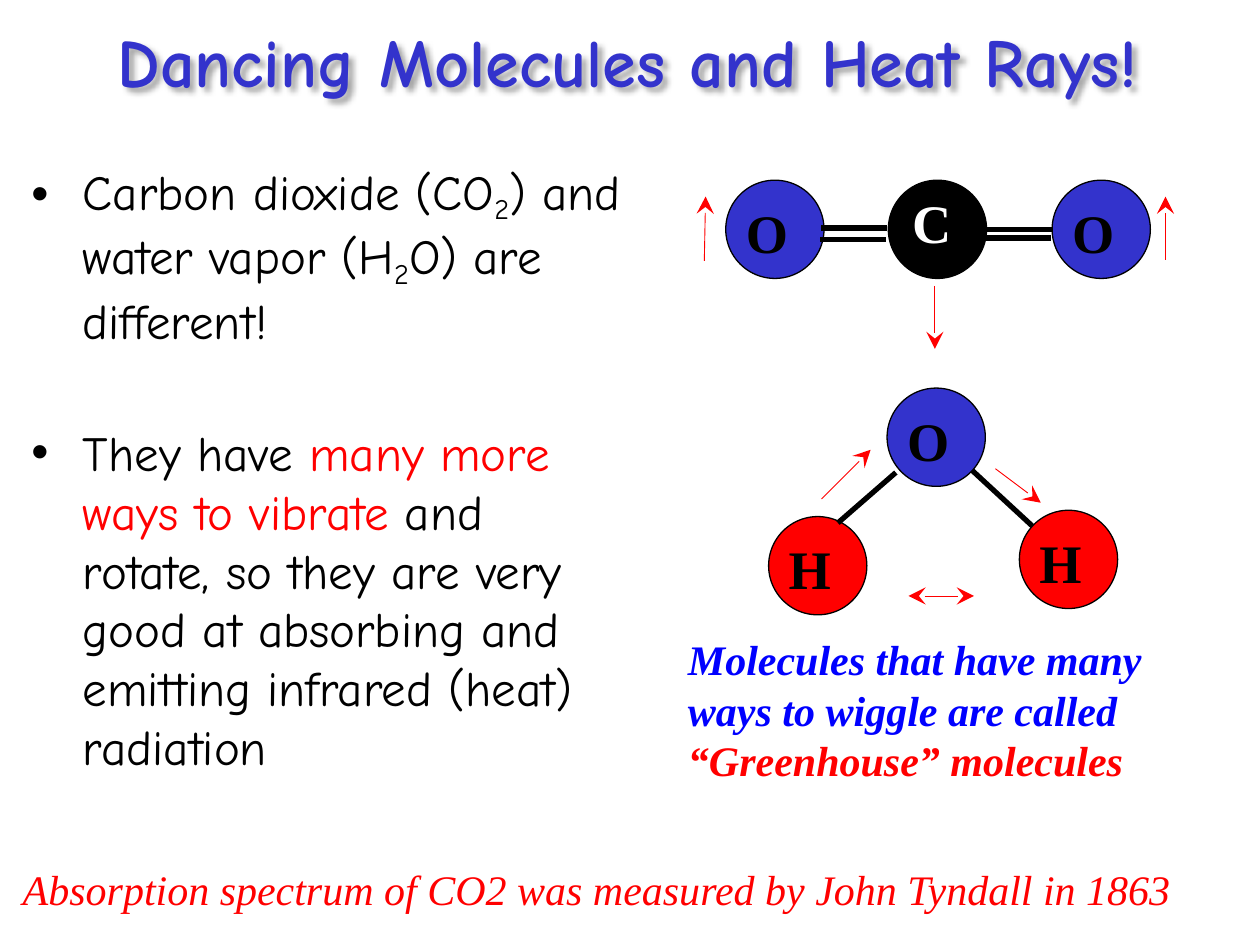
from dataclasses import dataclass
from typing import NamedTuple

from lxml.etree import SubElement
from pptx import Presentation
from pptx.dml.color import RGBColor
from pptx.enum.shapes import MSO_CONNECTOR, MSO_SHAPE
from pptx.enum.text import MSO_ANCHOR, PP_ALIGN
from pptx.oxml.ns import qn
from pptx.util import Inches, Pt


@dataclass(frozen=True)
class Theme:
    hand: str = "Comic Neue"
    serif: str = "Times New Roman"
    indigo: str = "3333CC"
    blue: str = "0000FF"
    red: str = "FF0000"
    black: str = "000000"
    white: str = "FFFFFF"
    title: int = 39
    atom: int = 31
    body: int = 28
    note: int = 24


T = Theme()


class Run(NamedTuple):
    text: str
    color: str
    sub: bool = False


class Atom(NamedTuple):
    symbol: str
    x: float
    y: float
    fill: str
    color: str = T.black
    dx: float = 0.11
    dy: float = 0.11


class Line(NamedTuple):
    x1: float
    y1: float
    x2: float
    y2: float


ATOM_SIZE = 0.78
ATOMS = [
    Atom("O", 5.76, 1.43, T.indigo),
    Atom("O", 8.35, 1.43, T.indigo),
    Atom("C", 7.05, 1.43, T.black, T.white, 0.14, 0.03),
    Atom("H", 6.1, 4.1, T.red),
    Atom("H", 8.09, 4.05, T.red),
    Atom("O", 7.04, 3.08, T.indigo),
]
REAR_BOND = Line(7.43, 3.47, 8.48, 4.44)
BONDS = [
    Line(7.82, 1.82, 8.35, 1.82),
    Line(7.82, 1.89, 8.34, 1.89),
    Line(6.52, 1.81, 7.04, 1.81),
    Line(6.51, 1.9, 7.03, 1.9),
    Line(6.65, 4.15, 7.11, 3.75),
]
STRETCH = Line(7.21, 4.73, 7.73, 4.73)
MOTIONS = [
    Line(5.59, 2.07, 5.6, 1.56),
    Line(9.25, 2.06, 9.25, 1.56),
    Line(7.42, 2.27, 7.42, 2.77),
    Line(6.52, 3.96, 6.91, 3.57),
    Line(7.9, 3.72, 8.26, 3.99),
]


def rgb(color: str) -> RGBColor:
    return RGBColor.from_string(color)


def add_text(s, box, paragraphs, *, font=T.serif, size=T.note, bold=False,
             italic=False, align=PP_ALIGN.LEFT, anchor=MSO_ANCHOR.TOP,
             insets=(0, 0, 0.04, 0), margin=0.04, hanging=0.0, bullet="",
             gap=0.0, wrap=True):
    """Add a text box; each paragraph is a list of runs."""
    sp = s.shapes.add_textbox(*map(Inches, box))
    tf = sp.text_frame
    tf.word_wrap, tf.vertical_anchor = wrap, anchor
    (tf.margin_left, tf.margin_top,
     tf.margin_right, tf.margin_bottom) = map(Inches, insets)
    for i, runs in enumerate(paragraphs):
        p = tf.add_paragraph() if i else tf.paragraphs[0]
        p.alignment = align
        pPr = p._p.get_or_add_pPr()
        pPr.set("marL", str(Inches(margin)))
        pPr.set("indent", str(Inches(-hanging)))
        if bullet:
            buClr = SubElement(pPr, qn("a:buClr"))
            SubElement(buClr, qn("a:srgbClr"), val=T.black)
            SubElement(pPr, qn("a:buFont"), typeface="Arial")
            SubElement(pPr, qn("a:buChar"), char=bullet)
        if i:
            p.space_before = Pt(gap)
        for run in runs:
            r = p.add_run()
            r.text = run.text
            r.font.name, r.font.size = font, Pt(size)
            r.font.bold, r.font.italic = bold, italic
            r.font.color.rgb = rgb(run.color)
            if run.sub:
                r.font._element.set("baseline", "-20000")
    return sp


def add_line(s, line: Line, color: str, width: float, ends=()) -> None:
    x1, y1, x2, y2 = map(Inches, line)
    cn = s.shapes.add_connector(MSO_CONNECTOR.STRAIGHT, x1, y1, x2, y2)
    cn.line.color.rgb, cn.line.width = rgb(color), Pt(width)
    ln = cn.line._get_or_add_ln()
    for end in ends:
        SubElement(ln, qn(f"a:{end}"), type="stealth", w="lg", len="lg")
    SubElement(cn._element.spPr, qn("a:effectLst"))


def add_atom(s, atom: Atom) -> None:
    sp = s.shapes.add_shape(MSO_SHAPE.OVAL, Inches(atom.x), Inches(atom.y),
                            Inches(ATOM_SIZE), Inches(ATOM_SIZE))
    sp.shadow.inherit = False
    sp.fill.solid()
    sp.fill.fore_color.rgb = rgb(atom.fill)
    sp.line.color.rgb, sp.line.width = rgb(T.black), Pt(0.75)
    add_text(s, (atom.x + atom.dx, atom.y + atom.dy, 0.56, 0.54),
             [[Run(atom.symbol, atom.color)]], size=T.atom, bold=True,
             insets=(0.04, 0.04, 0.1, 0.04), margin=0.01)


def add_soft_shadow(sp) -> None:
    effects = SubElement(sp._element.spPr, qn("a:effectLst"))
    shadow = SubElement(effects, qn("a:outerShdw"), blurRad=str(Pt(3)),
                        dist=str(Pt(3)), dir="2700000", algn="tl", rotWithShape="0")
    color = SubElement(shadow, qn("a:srgbClr"), val=T.black)
    SubElement(color, qn("a:alpha"), val="35000")


def main() -> None:
    prs = Presentation()
    prs.slide_width, prs.slide_height = Inches(10), Inches(7.5)
    s = prs.slides.add_slide(prs.slide_layouts[6])

    # Bond that runs behind the atoms
    add_line(s, REAR_BOND, T.black, 3)

    # Title and bullets
    frame = dict(font=T.hand, insets=(0.1, 0.05, 0.13, 0.05))
    title = add_text(s, (0.14, 0, 9.67, 0.96),
                     [[Run("Dancing Molecules and Heat Rays!", T.indigo)]],
                     size=T.title, bold=True, align=PP_ALIGN.CENTER,
                     anchor=MSO_ANCHOR.MIDDLE, **frame)
    add_soft_shadow(title)
    add_text(s, (0.12, 1.23, 4.95, 6.27), [
        [Run("Carbon dioxide (CO", T.black), Run("2", T.black, True),
         Run(") and water vapor (H", T.black), Run("2", T.black, True),
         Run("O) are different!", T.black)],
        [Run("They have ", T.black), Run("many more ways to vibrate ", T.red),
         Run("and rotate, so they are very good at absorbing and emitting "
             "infrared (heat) radiation", T.black)],
    ], size=T.body, margin=0.44, hanging=0.41, bullet="•", gap=42, **frame)

    # Greenhouse caption
    add_text(s, (5.42, 5.03, 4.18, 1.18), [[
        Run("Molecules that have many ways to wiggle are called ", T.blue),
        Run("“Greenhouse” molecules", T.red)]], bold=True, italic=True)

    # Molecules and their motions
    for atom in ATOMS:
        add_atom(s, atom)
    for bond in BONDS:
        add_line(s, bond, T.black, 3)
    add_line(s, STRETCH, T.red, 0.5, ("headEnd", "tailEnd"))
    for motion in MOTIONS:
        add_line(s, motion, T.red, 0.5, ("tailEnd",))

    # Footnote
    add_text(s, (0.14, 6.85, 9.37, 0.4), [[
        Run("Absorption spectrum of CO2 was measured by John Tyndall in 1863",
            T.red)]], italic=True, wrap=False)

    prs.save("out.pptx")


if __name__ == "__main__":
    main()
